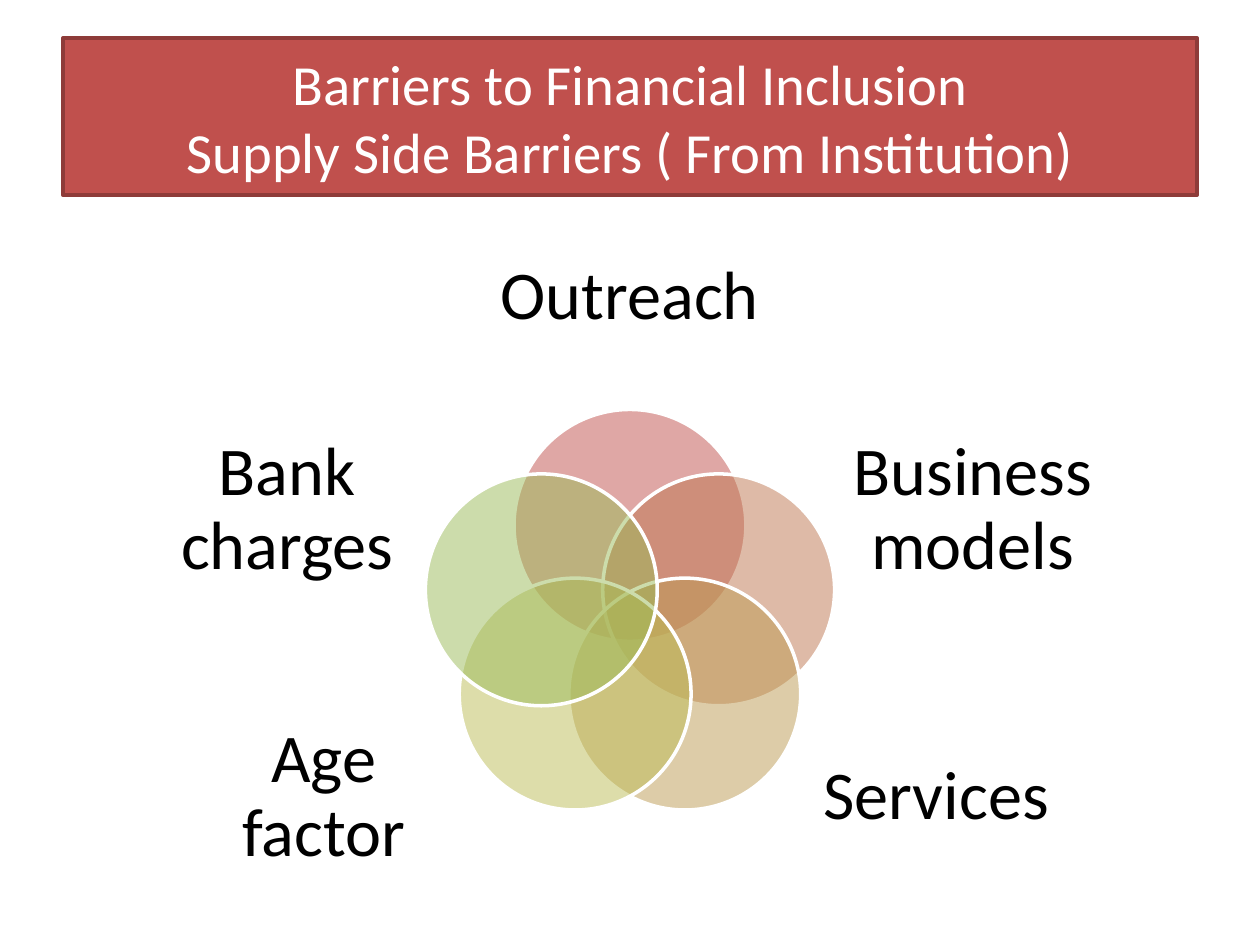
from dataclasses import dataclass
from math import cos, pi, sin

from lxml.etree import SubElement
from pptx import Presentation
from pptx.dml.color import RGBColor
from pptx.enum.shapes import MSO_SHAPE
from pptx.enum.text import MSO_ANCHOR, PP_ALIGN
from pptx.oxml.ns import qn
from pptx.util import Inches, Pt


@dataclass(frozen=True)
class Theme:
    font: str = "Calibri"
    title_size: float = 32.4
    label_size: float = 39
    line_width: float = 2
    white: str = "FFFFFF"
    black: str = "000000"
    red: str = "C0504D"
    dark_red: str = "8E3B39"


THEME = Theme()

# Text, circle colour, label centre (across from the middle, down from the top), label size
BARRIERS = [
    ("Outreach", THEME.red, (0, 0.61), (2.13, 1.23)),
    ("Business models", "BF7750", (2.72, 2.3), (1.91, 1.34)),
    ("Services", "BD9B53", (2.43, 4.58), (1.91, 1.34)),
    ("Age factor", "BCBC56", (-2.43, 4.58), (1.91, 1.34)),
    ("Bank charges", "9BBB59", (-2.72, 2.3), (1.91, 1.34)),
]


def write_text(shape, text, *, size, color, margin=0.0, line_spacing=1.0):
    """Fill a shape with centred text, one paragraph for each line."""
    frame = shape.text_frame
    frame.word_wrap = True
    frame.vertical_anchor = MSO_ANCHOR.MIDDLE
    frame.margin_left = frame.margin_right = Inches(margin)
    frame.margin_top = frame.margin_bottom = Inches(margin)
    frame.text = text
    for paragraph in frame.paragraphs:
        paragraph.alignment = PP_ALIGN.CENTER
        paragraph.line_spacing = line_spacing
        paragraph.font.name = THEME.font
        paragraph.font.size = Pt(size)
        paragraph.font.color.rgb = RGBColor.from_string(color)


def add_filled_shape(slide, kind, box, fill, line, opacity=100):
    shape = slide.shapes.add_shape(kind, *map(Inches, box))
    shape.shadow.inherit = False
    shape.fill.solid()
    shape.fill.fore_color.rgb = RGBColor.from_string(fill)
    shape.line.color.rgb = RGBColor.from_string(line)
    shape.line.width = Pt(THEME.line_width)
    if opacity < 100:
        color = shape.element.spPr.find(qn("a:solidFill")).find(qn("a:srgbClr"))
        SubElement(color, qn("a:alpha"), val=str(opacity * 1000))
    return shape


def add_title(slide, box):
    banner = add_filled_shape(slide, MSO_SHAPE.RECTANGLE, box, THEME.red, THEME.dark_red)
    write_text(
        banner,
        "Barriers to Financial Inclusion\nSupply Side Barriers ( From Institution)",
        size=THEME.title_size, color=THEME.white, margin=0.05,
    )


def add_venn(slide, box, diameter=1.84, ring_radius=0.74, ring_drop=3.16):
    """Set overlapping circles evenly on a ring, each with a label outside it."""
    left, top, width, _ = box
    middle = left + width / 2
    for index, (text, color, (across, down), (label_width, label_height)) in enumerate(BARRIERS):
        angle = 2 * pi * index / len(BARRIERS)
        circle_left = middle + ring_radius * sin(angle) - diameter / 2
        circle_top = top + ring_drop - ring_radius * cos(angle) - diameter / 2
        circle_box = (circle_left, circle_top, diameter, diameter)
        add_filled_shape(slide, MSO_SHAPE.OVAL, circle_box, color, THEME.white, opacity=50)

        label = slide.shapes.add_textbox(
            Inches(middle + across - label_width / 2),
            Inches(top + down - label_height / 2),
            Inches(label_width),
            Inches(label_height),
        )
        write_text(label, text, size=THEME.label_size, color=THEME.black, line_spacing=0.9)


def main():
    presentation = Presentation()
    presentation.slide_width = Inches(10)
    presentation.slide_height = Inches(7.5)
    slide = presentation.slides.add_slide(presentation.slide_layouts[6])
    add_title(slide, (0.5, 0.3, 9, 1.25))
    add_venn(slide, (0.5, 1.75, 9, 5.25))
    presentation.save("out.pptx")


if __name__ == "__main__":
    main()
